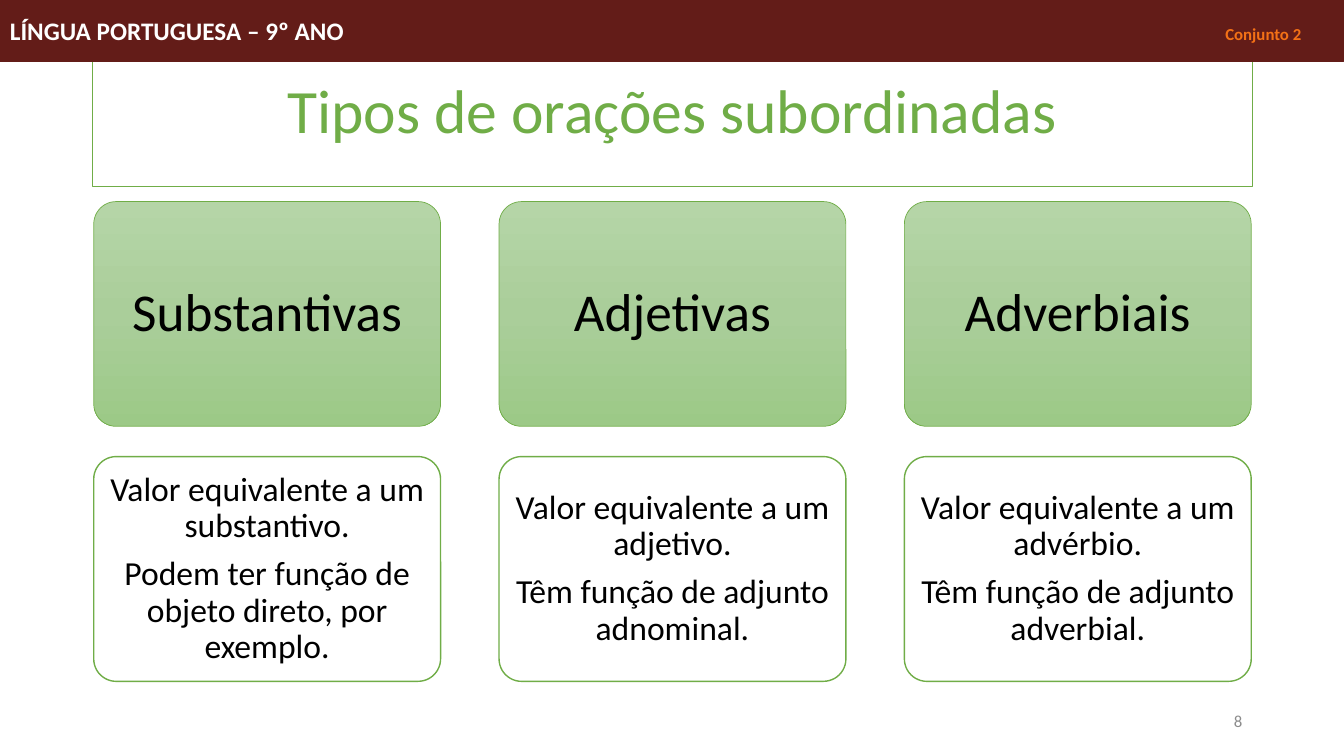
import copy

import pptx
import pptx.dml.color
import pptx.enum.shapes
import pptx.enum.text
import pptx.oxml.ns
import pptx.util
from lxml import etree

Inches = pptx.util.Inches
Pt = pptx.util.Pt
RGBColor = pptx.dml.color.RGBColor
Align = pptx.enum.text.PP_ALIGN
Shapes = pptx.enum.shapes.MSO_SHAPE

TITLE = "Tipos de orações subordinadas"
SUBJECT = "LÍNGUA PORTUGUESA – 9º ANO"
SET_NAME = "Conjunto 2"
PAGE_NUMBER = "8"
CLAUSE_TYPES = [
    ("Substantivas", ["Valor equivalente a um substantivo.",
                      "Podem ter função de objeto direto, por exemplo."]),
    ("Adjetivas", ["Valor equivalente a um adjetivo.",
                   "Têm função de adjunto adnominal."]),
    ("Adverbiais", ["Valor equivalente a um advérbio.",
                    "Têm função de adjunto adverbial."]),
]

FONT = "Calibri"
GREEN = RGBColor(0x70, 0xAD, 0x47)
MAROON = RGBColor(0x63, 0x1C, 0x18)
ORANGE = RGBColor(0xF4, 0x71, 0x16)
GRAY = RGBColor(0x8C, 0x8C, 0x8C)
WHITE = RGBColor(0xFF, 0xFF, 0xFF)
BLACK = RGBColor(0, 0, 0)
GRADIENT = [(0, RGBColor(0xB5, 0xD5, 0xA7)),
            (0.5, RGBColor(0xAA, 0xCE, 0x9A)),
            (1, RGBColor(0x9C, 0xC9, 0x87))]

SLIDE_WIDTH, SLIDE_HEIGHT = 13.33, 7.5
CARD_LEFT, CARD_STEP = 0.93, 4.02
CARD_WIDTH, CARD_HEIGHT = 3.44, 2.23
HEADING_TOP, DETAIL_TOP = 2, 4.53
TAB_POSITION = 12.81


def format_run(run, size, color, bold=False):
    run.font.name = FONT
    run.font.size = Pt(size)
    run.font.color.rgb = color
    run.font.bold = bold


def write_text(shape, lines, size, color, align=Align.CENTER, bold=False,
               inset=0.1, inset_y=0.05, line_spacing=1.0, gap=0):
    frame = shape.text_frame
    frame.word_wrap = True
    frame.auto_size = pptx.enum.text.MSO_AUTO_SIZE.NONE
    frame.vertical_anchor = pptx.enum.text.MSO_ANCHOR.MIDDLE
    frame.margin_left = frame.margin_right = Inches(inset)
    frame.margin_top = frame.margin_bottom = Inches(inset_y)
    for index, line in enumerate(lines):
        paragraph = frame.add_paragraph() if index else frame.paragraphs[0]
        paragraph.alignment = align
        paragraph.line_spacing = line_spacing
        paragraph.space_before = Pt(gap if index else 0)
        run = paragraph.add_run()
        run.text = line
        format_run(run, size, color, bold)


def style_box(shape, fill, line, line_width):
    shape.fill.solid()
    shape.fill.fore_color.rgb = fill
    shape.line.color.rgb = line
    shape.line.width = Pt(line_width)


def add_box(slide, kind, left, top, width, height, fill, line, line_width):
    shape = slide.shapes.add_shape(
        kind, Inches(left), Inches(top), Inches(width), Inches(height))
    shape.shadow.inherit = False
    style_box(shape, fill, line, line_width)
    return shape


def add_card(slide, left, top, line_width):
    card = add_box(slide, Shapes.ROUNDED_RECTANGLE, left, top,
                   CARD_WIDTH, CARD_HEIGHT, WHITE, GREEN, line_width)
    card.adjustments[0] = 0.1
    return card


def apply_gradient(shape):
    shape.fill.gradient()
    shape.fill.gradient_angle = 270
    stop_list = shape._element.spPr.find(
        ".//" + pptx.oxml.ns.qn("a:gsLst"))
    stop_list.insert(1, copy.deepcopy(stop_list[0]))
    for stop, (position, color) in zip(shape.fill.gradient_stops, GRADIENT):
        stop.position = position
        stop.color.rgb = color


def add_title(slide):
    title = slide.shapes.title
    title.left, title.top = Inches(0.92), Inches(0.4)
    title.width, title.height = Inches(11.5), Inches(1.45)
    style_box(title, WHITE, GREEN, 1)
    write_text(title, [TITLE], 44, GREEN, line_spacing=0.9)


def add_header(slide):
    header = add_box(slide, Shapes.RECTANGLE, 0, 0, SLIDE_WIDTH, 0.61,
                     MAROON, MAROON, 0.75)
    write_text(header, [SUBJECT + "\t"], 18, WHITE, align=Align.LEFT, bold=True)
    paragraph = header.text_frame.paragraphs[0]
    tab_list = etree.SubElement(paragraph._p.get_or_add_pPr(),
                                pptx.oxml.ns.qn("a:tabLst"))
    etree.SubElement(tab_list, pptx.oxml.ns.qn("a:tab"),
                     pos=str(Inches(TAB_POSITION)), algn="r")
    set_run = paragraph.add_run()
    set_run.text = SET_NAME
    format_run(set_run, 12, ORANGE, bold=True)


def main():
    presentation = pptx.Presentation()
    presentation.slide_width = Inches(SLIDE_WIDTH)
    presentation.slide_height = Inches(SLIDE_HEIGHT)
    slide = presentation.slides.add_slide(presentation.slide_layouts[5])
    add_title(slide)

    for column, (name, details) in enumerate(CLAUSE_TYPES):
        left = CARD_LEFT + column * CARD_STEP
        heading = add_card(slide, left, HEADING_TOP, 0.5)
        apply_gradient(heading)
        write_text(heading, [name], 38, BLACK, inset=0.16, inset_y=0.16,
                   line_spacing=0.9)
        detail = add_card(slide, left, DETAIL_TOP, 1)
        write_text(detail, details, 24, BLACK, inset_y=0.1,
                   line_spacing=0.9, gap=8.4)

    page = slide.shapes.add_textbox(Inches(9.42), Inches(6.95),
                                    Inches(3), Inches(0.4))
    write_text(page, [PAGE_NUMBER], 12, GRAY, align=Align.RIGHT)
    add_header(slide)
    presentation.save("out.pptx")


if __name__ == "__main__":
    main()
